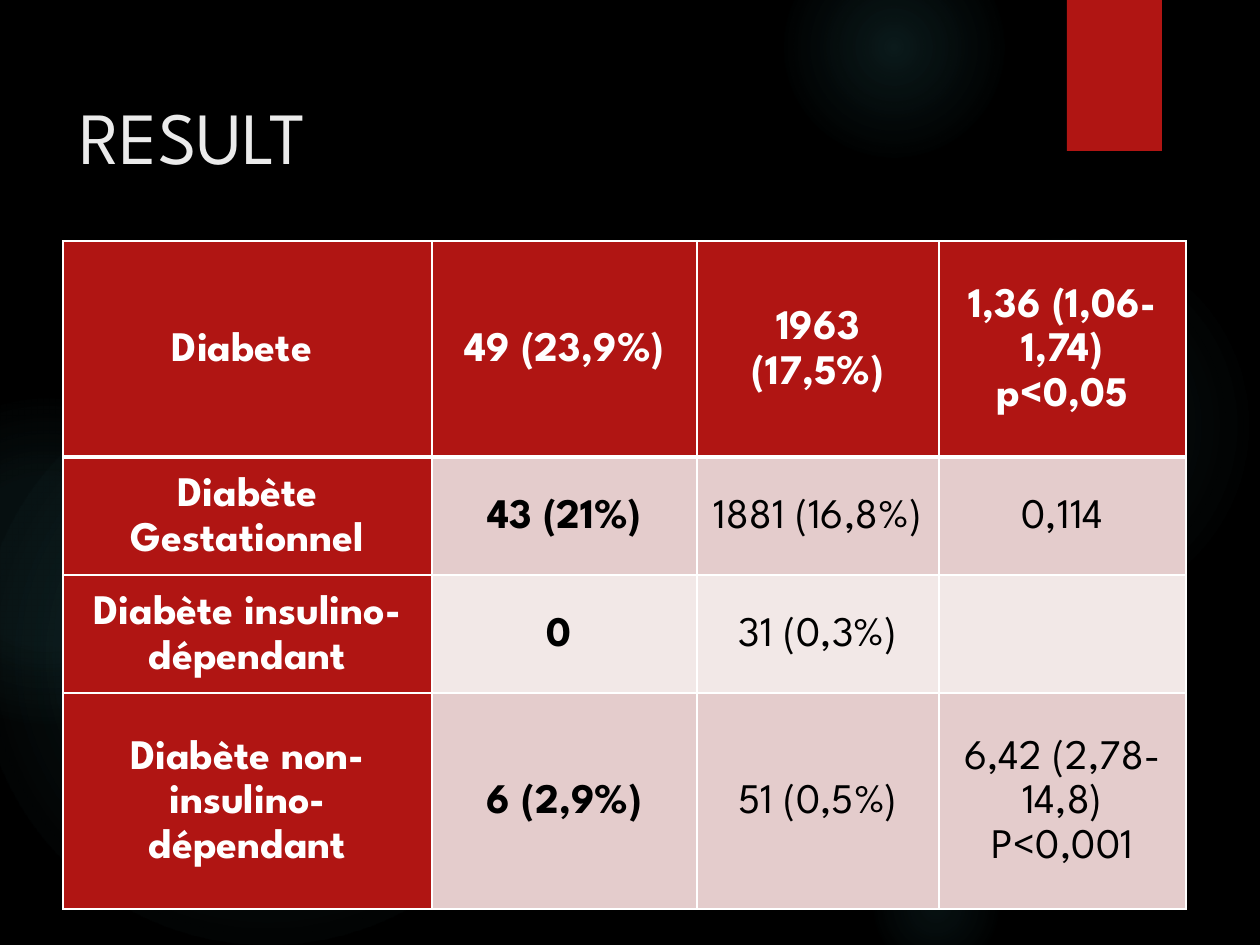
import pptx
import pptx.util
import pptx.dml.color
import pptx.enum.shapes
import pptx.enum.text
import pptx.oxml
import pptx.oxml.ns

FONT = "League Spartan"
RED, WHITE, BLACK, GLOW = "B01513", "FFFFFF", "000000", "50B9C1"
BANDS = ["E4CCCC", "F2E8E7"]
ORBS = [
    (868, 231, 388, [(0, 7), (36, 6), (69, 0)]),
    (784, -63, 220, [(0, 14), (36, 7), (73, 0)]),
    (868, 840, 136, [(0, 9), (36, 5), (66, 0)]),
    (-21, 368, 577, [(0, 11), (36, 10), (75, 0)]),
    (-116, 399, 325, [(0, 8), (36, 8), (72, 0)]),
]
COLS = [369, 265, 242, 247]
ROWS = [216, 110, 110, 216]
CELLS = [
    ["Diabete ", "49 (23,9%)", "1963 (17,5%)", "1,36 (1,06-1,74)\np<0,05"],
    ["Diabète Gestationnel", "43 (21%)", "1881 (16,8%)", "0,114"],
    ["Diabète insulino-dépendant", "0 ", "31 (0,3%)", ""],
    ["Diabète non-insulino-dépendant", "6 (2,9%)", "51 (0,5%)",
     "6,42 (2,78-14,8)\nP<0,001"],
]


def px(num):
    return pptx.util.Emu(round(num * 914400 / 126))


def color(code):
    return pptx.dml.color.RGBColor.from_string(code)


def apply(item, form):
    for key, val in form.items():
        setattr(item, key, val)


def paint(item, code):
    item.fill.solid()
    item.fill.fore_color.rgb = color(code)


def write(frame, text, size, code, bold=False, form={}):
    frame.text = text
    for para in frame.paragraphs:
        apply(para, form)
        for run in para.runs:
            apply(run.font, {"name": FONT, "size": pptx.util.Pt(size), "bold": bold})
            run.font.color.rgb = color(code)


def add_shape(slide, kind, left, top, wide, high):
    shape = slide.shapes.add_shape(kind, px(left), px(top), px(wide), px(high))
    shape.shadow.inherit = False
    shape.line.fill.background()
    return shape


def add_orb(slide, left, top, size, stops):
    kind = pptx.enum.shapes.MSO_SHAPE.OVAL
    orb = add_shape(slide, kind, left, top, size, size)
    marks = "".join(
        f'<a:gs pos="{pos * 1000}"><a:srgbClr val="{GLOW}">'
        f'<a:alpha val="{alpha * 1000}"/></a:srgbClr></a:gs>'
        for pos, alpha in stops)
    grad = pptx.oxml.parse_xml(
        f'<a:gradFill {pptx.oxml.ns.nsdecls("a")} rotWithShape="1">'
        f'<a:gsLst>{marks}</a:gsLst><a:path path="circle">'
        '<a:fillToRect l="50000" t="50000" r="50000" b="50000"/>'
        '</a:path></a:gradFill>')
    orb._element.spPr.find(pptx.oxml.ns.qn("a:prstGeom")).addnext(grad)


def add_title(slide, text):
    box = slide.shapes.add_textbox(px(67), px(63), px(973), px(193))
    apply(box.text_frame, {"word_wrap": True, "margin_top": px(28)})
    write(box.text_frame, text, 42, "EBEBEB")


def set_edge(cell, side, width):
    cell._tc.get_or_add_tcPr().append(pptx.oxml.parse_xml(
        f'<a:ln{side} {pptx.oxml.ns.nsdecls("a")} w="{width * 12700}">'
        f'<a:solidFill><a:srgbClr val="{WHITE}"/></a:solidFill></a:ln{side}>'))


def fill_cell(cell, text, row, col):
    thick = {(0, "B"), (1, "T")}
    for side in "LRTB":
        set_edge(cell, side, 3 if (row, side) in thick else 1)
    head = row == 0 or col == 0
    paint(cell, RED if head else BANDS[(row - 1) % 2])
    apply(cell, {"margin_left": px(9), "margin_right": px(9),
                 "margin_top": px(1), "margin_bottom": px(1),
                 "vertical_anchor": pptx.enum.text.MSO_ANCHOR.MIDDLE})
    form = {"alignment": pptx.enum.text.PP_ALIGN.CENTER, "line_spacing": 1.15}
    write(cell.text_frame, text, 24, WHITE if head else BLACK, head or col == 1, form)


def add_table(slide):
    table = slide.shapes.add_table(
        len(ROWS), len(COLS), px(63), px(241), px(sum(COLS)), px(sum(ROWS))).table
    for col, wide in zip(table.columns, COLS):
        col.width = px(wide)
    for row, high in zip(table.rows, ROWS):
        row.height = px(high)
    for row, texts in enumerate(CELLS):
        for col, text in enumerate(texts):
            fill_cell(table.cell(row, col), text, row, col)


def main():
    deck = pptx.Presentation()
    apply(deck, {"slide_width": px(1260), "slide_height": px(945)})
    slide = deck.slides.add_slide(deck.slide_layouts[6])
    paint(slide.background, BLACK)
    for orb in ORBS:
        add_orb(slide, *orb)
    flag = add_shape(slide, pptx.enum.shapes.MSO_SHAPE.RECTANGLE, 1067, 0, 95, 151)
    paint(flag, RED)
    add_title(slide, "RESULT")
    add_table(slide)
    deck.save("out.pptx")


if __name__ == "__main__":
    main()
